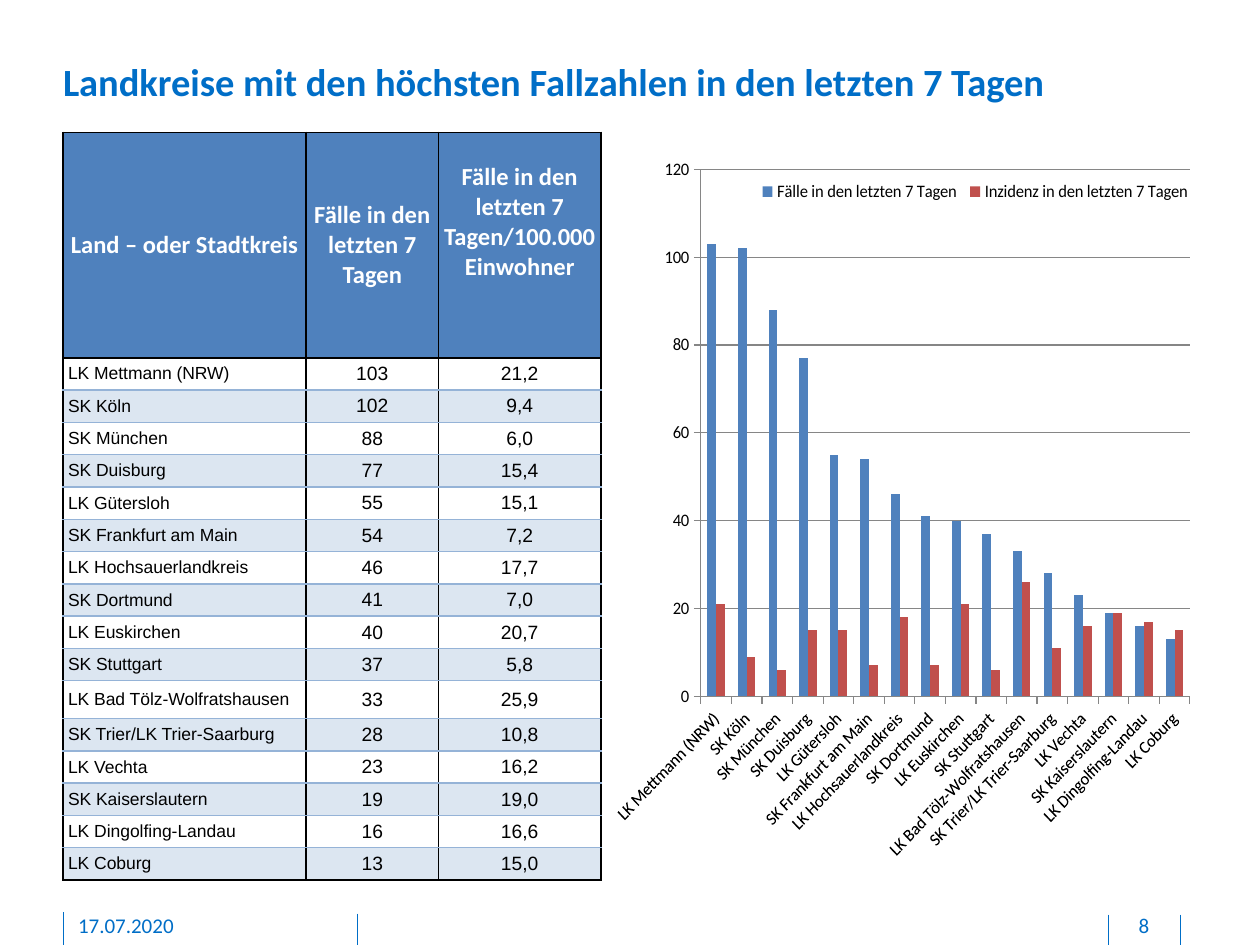
import pptx
import pptx.chart.data
import pptx.dml.color
import pptx.enum.chart
import pptx.enum.shapes
import pptx.enum.text
import pptx.oxml
import pptx.oxml.ns
import pptx.util

Inches = pptx.util.Inches
Pt = pptx.util.Pt
RGBColor = pptx.dml.color.RGBColor
ALIGN = pptx.enum.text.PP_ALIGN
ANCHOR = pptx.enum.text.MSO_ANCHOR

BLUE = RGBColor(0x00, 0x6E, 0xC7)
HEADER_BLUE = RGBColor(0x4F, 0x81, 0xBD)
BAND_BLUE = RGBColor(0xDC, 0xE6, 0xF1)
RULE_BLUE = RGBColor(0x95, 0xB3, 0xD7)
RED = RGBColor(0xC0, 0x50, 0x4D)
GREY = RGBColor(0x86, 0x86, 0x86)
BLACK = RGBColor(0, 0, 0)
WHITE = RGBColor(0xFF, 0xFF, 0xFF)

HEADERS = [
    "Land – oder Stadtkreis",
    "Fälle in den letzten 7 Tagen",
    "Fälle in den letzten 7 Tagen/100.000 Einwohner",
]
DISTRICTS = [
    ("LK Mettmann (NRW)", 103, 21.2),
    ("SK Köln", 102, 9.4),
    ("SK München", 88, 6.0),
    ("SK Duisburg", 77, 15.4),
    ("LK Gütersloh", 55, 15.1),
    ("SK Frankfurt am Main", 54, 7.2),
    ("LK Hochsauerlandkreis", 46, 17.7),
    ("SK Dortmund", 41, 7.0),
    ("LK Euskirchen", 40, 20.7),
    ("SK Stuttgart", 37, 5.8),
    ("LK Bad Tölz-Wolfratshausen", 33, 25.9),
    ("SK Trier/LK Trier-Saarburg", 28, 10.8),
    ("LK Vechta", 23, 16.2),
    ("SK Kaiserslautern", 19, 19.0),
    ("LK Dingolfing-Landau", 16, 16.6),
    ("LK Coburg", 13, 15.0),
]
TALL_ROW = 11


def style_font(font, size, color, name="Calibri", bold=False):
    font.name = name
    font.size = Pt(size)
    font.bold = bold
    font.color.rgb = color


def write(frame, text, align, size, color, name="Calibri", bold=False):
    frame.text = text
    para = frame.paragraphs[0]
    para.alignment = align
    style_font(para.runs[0].font, size, color, name, bold)


def clear_margins(owner):
    owner.margin_left = owner.margin_right = 0
    owner.margin_top = owner.margin_bottom = 0


def add_title(page, text):
    title = page.shapes.title
    title.left, title.top = Inches(0.5), Inches(0.46)
    title.width, title.height = Inches(8.85), Inches(0.37)
    frame = title.text_frame
    clear_margins(frame)
    frame.vertical_anchor = ANCHOR.MIDDLE
    write(frame, text, ALIGN.LEFT, 22, BLUE, bold=True)


def add_footer_text(page, text, left, width, align):
    box = page.shapes.add_textbox(
        Inches(left), Inches(7.24), Inches(width), Inches(0.21))
    frame = box.text_frame
    frame.word_wrap = True
    clear_margins(frame)
    frame.margin_bottom = Inches(0.05)
    write(frame, text, align, 12, BLUE)


def add_footer_rule(page, left, top):
    rule = page.shapes.add_connector(
        pptx.enum.shapes.MSO_CONNECTOR.STRAIGHT,
        Inches(left), Inches(top), Inches(left), Inches(7.5))
    rule.line.color.rgb = BLUE
    rule.line.width = Pt(0.5)
    properties = rule.element.find(pptx.oxml.ns.qn("p:spPr"))
    properties.append(pptx.oxml.parse_xml(
        f'<a:effectLst {pptx.oxml.ns.nsdecls("a")}/>'))


def set_borders(cell, top, bottom):
    properties = cell._tc.get_or_add_tcPr()
    sides = [("lnL", BLACK), ("lnR", BLACK), ("lnT", top), ("lnB", bottom)]
    for position, (side, color) in enumerate(sides):
        properties.insert(position, pptx.oxml.parse_xml(
            f'<a:{side} {pptx.oxml.ns.nsdecls("a")} w="12700"><a:solidFill>'
            f'<a:srgbClr val="{color}"/></a:solidFill></a:{side}>'))


def fill_header(table):
    for column, text in enumerate(HEADERS):
        cell = table.cell(0, column)
        clear_margins(cell)
        cell.vertical_anchor = ANCHOR.MIDDLE
        write(cell.text_frame, text, ALIGN.CENTER, 14, WHITE, bold=True)
        cell.fill.solid()
        cell.fill.fore_color.rgb = HEADER_BLUE
        set_borders(cell, BLACK, BLACK)
    last = table.cell(0, len(HEADERS) - 1)
    last.vertical_anchor = ANCHOR.TOP
    last.margin_top = Inches(0.24)


def fill_district(table, row, district):
    name, cases, incidence = district
    top = BLACK if row == 1 else RULE_BLUE
    bottom = BLACK if row == len(DISTRICTS) else RULE_BLUE
    texts = [name, str(cases), f"{incidence:.1f}".replace(".", ",")]
    for column, text in enumerate(texts):
        cell = table.cell(row, column)
        clear_margins(cell)
        cell.vertical_anchor = ANCHOR.MIDDLE
        if column == 0:
            cell.margin_left = Inches(0.04)
            write(cell.text_frame, text, ALIGN.LEFT, 10, BLACK, "Arial")
        else:
            write(cell.text_frame, text, ALIGN.CENTER, 11, BLACK, "Arial")
        if row % 2 == 0:
            cell.fill.solid()
            cell.fill.fore_color.rgb = BAND_BLUE
        else:
            cell.fill.background()
        set_borders(cell, top, bottom)


def add_district_table(page):
    height, header_height, tall_height = 5.94, 1.79, 0.3
    row_height = (height - header_height - tall_height) / (len(DISTRICTS) - 1)
    table = page.shapes.add_table(
        len(DISTRICTS) + 1, len(HEADERS),
        Inches(0.5), Inches(1.05), Inches(4.27), Inches(height)).table
    table.first_row = table.horz_banding = False
    for column, width in zip(table.columns, [1.93, 1.05, 1.29]):
        column.width = Inches(width)
    for row in table.rows:
        row.height = Inches(row_height)
    table.rows[0].height = Inches(header_height)
    table.rows[TALL_ROW].height = Inches(tall_height)
    fill_header(table)
    for row, district in enumerate(DISTRICTS, start=1):
        fill_district(table, row, district)


def manual_layout(left, top, width, height, target=""):
    return pptx.oxml.parse_xml(
        f'<c:layout {pptx.oxml.ns.nsdecls("c")}><c:manualLayout>{target}'
        '<c:xMode val="edge"/><c:yMode val="edge"/>'
        f'<c:x val="{left}"/><c:y val="{top}"/>'
        f'<c:w val="{width}"/><c:h val="{height}"/>'
        '</c:manualLayout></c:layout>')


def place_plot(chart):
    area = chart._chartSpace.chart.plotArea
    for layout in area.findall(pptx.oxml.ns.qn("c:layout")):
        area.remove(layout)
    area.insert(0, manual_layout(
        0.09, 0.05, 0.82, 0.71, '<c:layoutTarget val="inner"/>'))


def add_legend(chart):
    chart.has_legend = True
    legend = chart.legend
    legend.position = pptx.enum.chart.XL_LEGEND_POSITION.RIGHT
    legend.include_in_layout = False
    element = legend._element
    for layout in element.findall(pptx.oxml.ns.qn("c:layout")):
        element.remove(layout)
    position = element.find(pptx.oxml.ns.qn("c:legendPos"))
    position.addnext(manual_layout(0.18, 0.06, 0.74, 0.04))


def style_axes(chart):
    for axis in (chart.category_axis, chart.value_axis):
        axis.format.line.color.rgb = GREY
        axis.major_tick_mark = pptx.enum.chart.XL_TICK_MARK.OUTSIDE
        style_font(axis.tick_labels.font, 10, BLACK)
    labels = chart.category_axis._element.find(pptx.oxml.ns.qn("c:txPr"))
    labels.find(pptx.oxml.ns.qn("a:bodyPr")).set("rot", "-2700000")
    values = chart.value_axis
    values.minimum_scale, values.maximum_scale = 0, 120
    values.major_unit = 20
    values.has_major_gridlines = True
    values.major_gridlines.format.line.color.rgb = GREY


def add_district_chart(page):
    names, cases, incidences = zip(*DISTRICTS)
    data = pptx.chart.data.CategoryChartData()
    data.categories = names
    data.add_series("Fälle in den letzten 7 Tagen", cases)
    data.add_series("Inzidenz in den letzten 7 Tagen", map(round, incidences))
    chart = page.shapes.add_chart(
        pptx.enum.chart.XL_CHART_TYPE.COLUMN_CLUSTERED,
        Inches(4.87), Inches(1.05), Inches(5), Inches(5.89), data).chart
    chart.has_title = False
    style_font(chart.font, 10, BLACK)
    plot = chart.plots[0]
    plot.vary_by_categories = False
    plot.gap_width, plot.overlap = 150, 0
    for series, color in zip(plot.series, [HEADER_BLUE, RED]):
        series.format.fill.solid()
        series.format.fill.fore_color.rgb = color
    style_axes(chart)
    place_plot(chart)
    add_legend(chart)


def main():
    deck = pptx.Presentation()
    deck.slide_width, deck.slide_height = Inches(10), Inches(7.5)
    page = deck.slides.add_slide(deck.slide_layouts[5])
    for left, top in [(2.84, 7.25), (0.5, 7.24), (9.37, 7.26), (8.8, 7.26)]:
        add_footer_rule(page, left, top)
    add_title(page, "Landkreise mit den höchsten Fallzahlen in den letzten 7 Tagen")
    add_footer_text(page, "17.07.2020", 0.62, 2.03, ALIGN.LEFT)
    add_footer_text(page, "8", 8.81, 0.54, ALIGN.CENTER)
    add_district_table(page)
    add_district_chart(page)
    deck.save("out.pptx")


if __name__ == "__main__":
    main()
